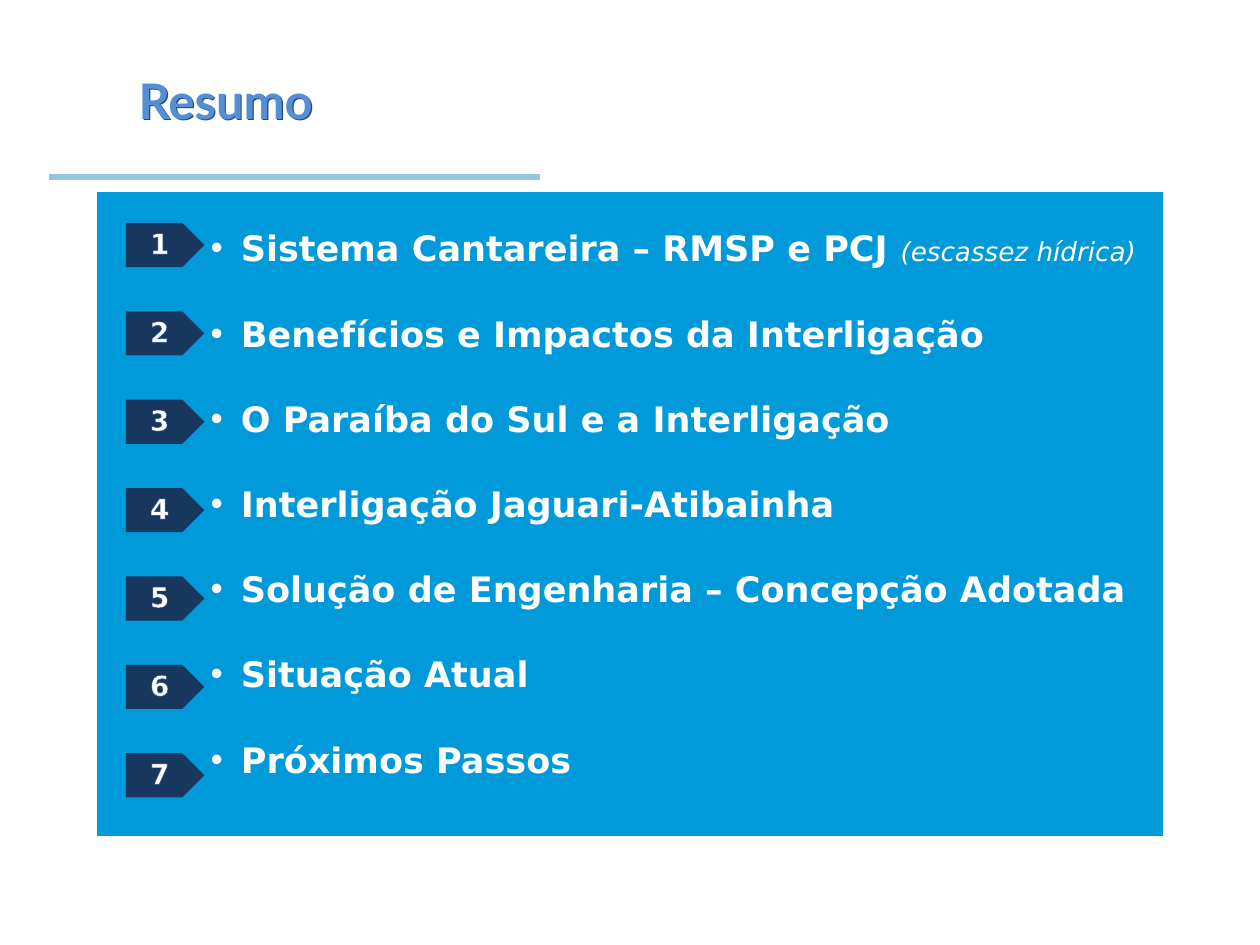
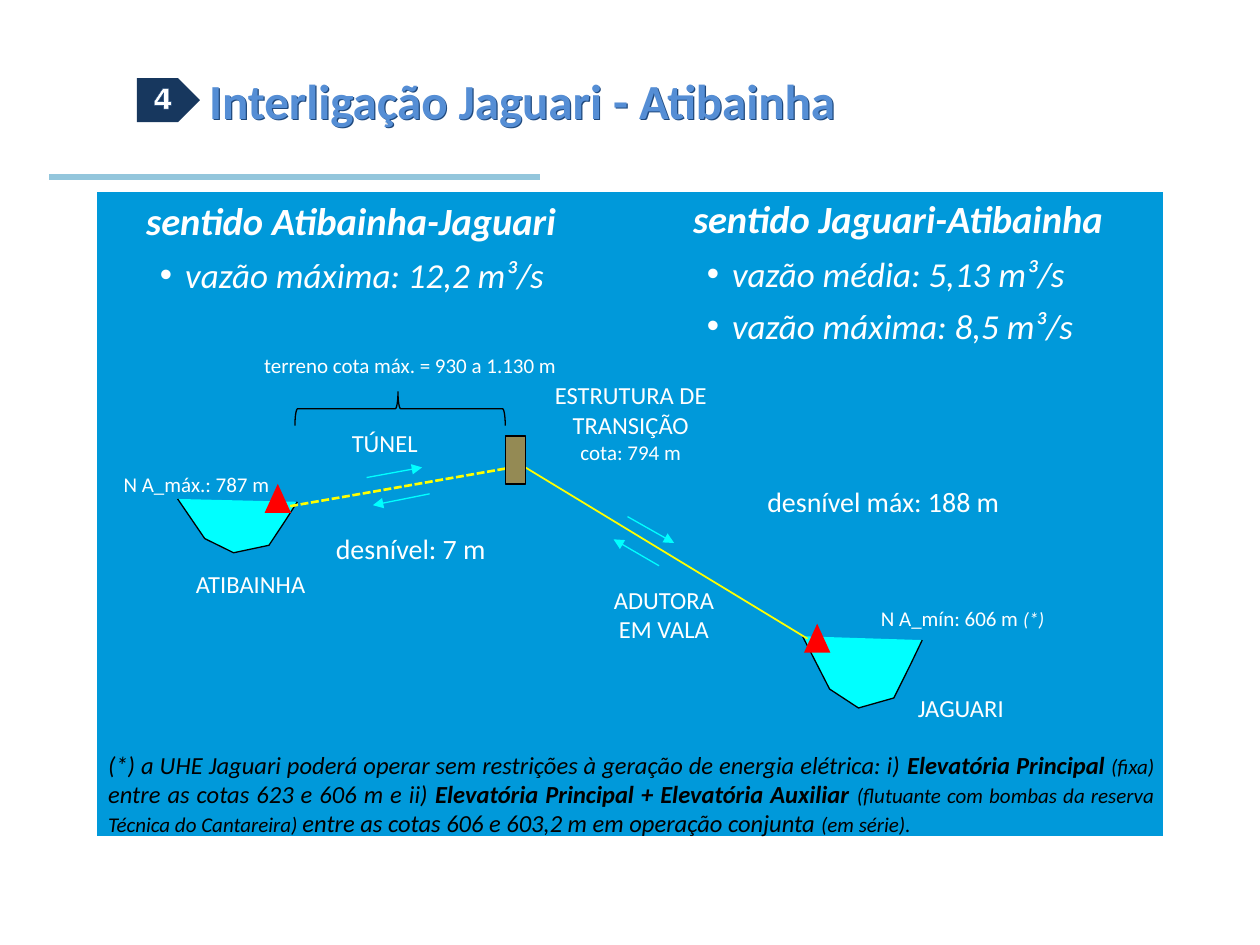
"""Build the summary and the Jaguari - Atibainha interconnection slides."""
from pptx import Presentation
from pptx import util as u
from pptx.dml.color import RGBColor
from pptx.enum import dml, shapes, text
from pptx.oxml import parse_xml
from pptx.oxml.ns import nsdecls, qn

Pt = u.Pt
rgb = RGBColor.from_string
A = nsdecls("a")
WHITE, BLACK, NAVY, PANEL, BAND = "FFFFFF", "000000", "17375E", "0099DA", "93C6DC"
TITLE, EDGE, CYAN, YELLOW, RED, TAN = "558ED5", "1F497D", "00FFFF", "FFFF00", "FF0000", "948A54"
LEFT, CENTER, JUSTIFY = text.PP_ALIGN.LEFT, text.PP_ALIGN.CENTER, text.PP_ALIGN.JUSTIFY
SHAPE = shapes.MSO_SHAPE
FRAME = {"word_wrap": True, "auto_size": text.MSO_AUTO_SIZE.NONE,
         "vertical_anchor": text.MSO_ANCHOR.TOP}


def paint(sp, fill=None, line=None, width=0.75):
    """Set fill and outline of a shape, without shadow."""
    sp.shadow.inherit = False
    if fill:
        sp.fill.solid()
        sp.fill.fore_color.rgb = rgb(fill)
    else:
        sp.fill.background()
    if line:
        sp.line.color.rgb = rgb(line)
        sp.line.width = Pt(width)
    else:
        sp.line.fill.background()


def write(sp, paras, fmt, color=WHITE, align=CENTER, **para):
    """Fill a shape with paragraphs, each a list of (text, format) runs."""
    tf = sp.text_frame
    for k, v in FRAME.items():
        setattr(tf, k, v)
    for i, runs in enumerate(paras):
        p = tf.add_paragraph() if i else tf.paragraphs[0]
        for k, v in {"alignment": align, "space_before": Pt(0), **para}.items():
            setattr(p, k, v if i or k != "space_before" else Pt(0))
        for words, extra in runs:
            r = p.add_run()
            r.text = words
            for k, v in {**fmt, **extra}.items():
                setattr(r.font, k, v)
            r.font.color.rgb = rgb(color)


prs = Presentation()
prs.slide_width, prs.slide_height = Pt(720), Pt(540)
s1 = prs.slides.add_slide(prs.slide_layouts[1])
s2 = prs.slides.add_slide(prs.slide_layouts[3])

master = prs.slide_master.shapes.element
for i, (box, fill) in enumerate([((54.7, 108.7, 610.6, 370), PANEL),
                                 ((27.4, 98.6, 282.2, 5), BAND)]):
    sp = s1.shapes.add_shape(SHAPE.RECTANGLE, *map(Pt, box))
    paint(sp, fill, WHITE, 1.5)
    master.insert(2 + i, sp.element)

for s, title, font, x, w in [(s1, "Resumo", "Lato", 72, 613),
                             (s2, "Interligação Jaguari - Atibainha", "Calibri", 112.3, 548)]:
    sp = s.shapes.title
    sp.left, sp.top, sp.width, sp.height = map(Pt, (x, 36.7, w, 41))
    write(sp, [[(title, {})]], {"name": font, "size": Pt(28), "bold": True}, TITLE, LEFT)
    sp.element.spPr.append(parse_xml(
        f'<a:effectLst {A}><a:outerShdw dist="12700" dir="2700000">'
        f'<a:srgbClr val="{EDGE}"/></a:outerShdw></a:effectLst>'))

topics = ["Sistema Cantareira – RMSP e PCJ ", "Benefícios e Impactos da Interligação",
          "O Paraíba do Sul e a Interligação", "Interligação Jaguari-Atibainha",
          "Solução de Engenharia – Concepção Adotada", "Situação Atual", "Próximos Passos"]
paras = [[(t, {})] for t in topics]
paras[0].append(("(escassez hídrica)", {"size": Pt(15), "bold": False, "italic": True}))
topic_list = s1.placeholders[1]
topic_list.left, topic_list.top, topic_list.width, topic_list.height = map(Pt, (103, 126, 560, 350))
write(topic_list, paras, {"name": "DejaVu Sans", "size": Pt(20), "bold": True},
      align=LEFT, space_before=Pt(24.7))

plain = {"size": Pt(20), "bold": False}
flows = [(s2.placeholders[1], (76.3, 109, 260, 66),
          ["sentido Atibainha-Jaguari", "vazão máxima: 12,2 m³/s"]),
         (s2.placeholders[2], (388.8, 108, 266, 96),
          ["sentido Jaguari-Atibainha", "vazão média: 5,13 m³/s", "vazão máxima: 8,5 m³/s"])]
for sp, box, lines in flows:
    sp.left, sp.top, sp.width, sp.height = map(Pt, box)
    write(sp, [[(t, plain if i else {})] for i, t in enumerate(lines)],
          {"name": "Calibri", "size": Pt(22), "bold": True, "italic": True},
          align=LEFT, space_after=Pt(6))

for sp, margin, hang in [(topic_list, 27.4, 17.3), (flows[0][0], 22.3, 14.4),
                         (flows[1][0], 22.3, 14.4)]:
    for i, p in enumerate(sp.text_frame.paragraphs):
        pPr = p._p.get_or_add_pPr()
        heading = i == 0 and sp is not topic_list
        pPr.set("marL", str(0 if heading else Pt(margin)))
        pPr.set("indent", str(0 if heading else -Pt(hang)))
        pPr.append(parse_xml(f"<a:buNone {A}/>" if heading else f'<a:buChar {A} char="•"/>'))

badges = [(s1, n + 1, 72, 127.4 + 50.5 * n, 44.8) for n in range(len(topics))]
for s, n, x, y, w in badges + [(s2, 4, 78.3, 44.6, 36)]:
    sp = s.shapes.add_shape(SHAPE.PENTAGON, *map(Pt, (x, y, w, 25.2)))
    paint(sp, NAVY)
    write(sp, [[(str(n), {})]], {"name": "DejaVu Sans", "size": Pt(16), "bold": True},
          line_spacing=0.9)
    sp.text_frame.vertical_anchor = text.MSO_ANCHOR.MIDDLE
    sp.text_frame.paragraphs[0].runs[0].font._element.insert(0, parse_xml(
        f'<a:ln {A} w="9525"><a:solidFill><a:srgbClr val="{EDGE}"/></a:solidFill></a:ln>'))

basin = [(15.5, 30.2), (32, 41), (52.2, 35.3), (61.5, 16.6), (68.4, 2.2)]
for x, y, depth in [(458.6, 363.6, 1), (101.5, 285.1, 0.75)]:
    fb = s2.shapes.build_freeform(Pt(x), Pt(y))
    fb.add_line_segments([(Pt(x + dx), Pt(y + dy * depth)) for dx, dy in basin], close=False)
    paint(fb.convert_to_shape(), CYAN, BLACK)

for ends, color, width, dash, arrow in [
        ((461.5, 365, 300.2, 267.1), YELLOW, 1, None, False),
        ((288.7, 267.8, 164.9, 289.4), YELLOW, 1.5, dml.MSO_LINE.SQUARE_DOT, False),
        ((358.6, 295.2, 385.2, 310.3), CYAN, 0.75, None, True),
        ((376.6, 323.3, 350.6, 308.2), CYAN, 0.75, None, True),
        ((209.5, 272.9, 241.2, 267.1), CYAN, 0.75, None, True),
        ((245.5, 282.2, 213.1, 288.7), CYAN, 0.75, None, True)]:
    c = s2.shapes.add_connector(shapes.MSO_CONNECTOR.STRAIGHT, *map(Pt, ends))
    c.line.color.rgb = rgb(color)
    c.line.width = Pt(width)
    if dash:
        c.line.dash_style = dash
    spPr = c._element.spPr
    if arrow:
        spPr.find(qn("a:ln")).append(parse_xml(f'<a:tailEnd {A} type="triangle"/>'))
    spPr.append(parse_xml(f"<a:effectLst {A}/>"))

for kind, box, fill, line in [
        (SHAPE.ISOSCELES_TRIANGLE, (459.4, 356.4, 15.1, 16.6), RED, None),
        (SHAPE.ISOSCELES_TRIANGLE, (151.2, 276.5, 15.1, 16.6), RED, None),
        (SHAPE.RECTANGLE, (288.7, 249.1, 11.5, 27.4), TAN, BLACK),
        (SHAPE.LEFT_BRACE, (218.9, 173.5, 19.4, 120.2), None, BLACK)]:
    sp = s2.shapes.add_shape(kind, *map(Pt, box))
    paint(sp, fill, line)
    if kind == SHAPE.LEFT_BRACE:
        sp.rotation = 90
        sp.adjustments[0], sp.adjustments[1] = 0.08, 0.51

small = {"size": Pt(12)}
for box, size, paras in [
        ((514.8, 392.4, 68.4, 24.5), 14, [[("JAGUARI", {})]]),
        ((97.9, 321.8, 90.7, 24.5), 14, [[("ATIBAINHA", {})]]),
        ((149, 241.2, 141.8, 24.5), 14, [[("TÚNEL", {})]]),
        ((341.3, 330.5, 76.3, 41), 14, [[("ADUTORA EM VALA", {})]]),
        ((301, 213.8, 118.8, 55.4), 14,
         [[("ESTRUTURA DE TRANSIÇÃO", {})], [("cota: 794 m", small)]]),
        ((492.5, 342.7, 115.2, 21.6), 12,
         [[("N A_mín: 606 m ", {}), ("(*)", {"size": Pt(11), "italic": True})]]),
        ((54.7, 265.7, 115.2, 21.6), 12, [[("N A_máx.: 787 m", {})]]),
        ((134.4, 198, 200, 21.6), 12, [[("terreno cota máx. = 930 a 1.130 m", {})]]),
        ((424.8, 273.6, 160, 26.6), 16, [[("desnível máx: 188 m", {})]]),
        ((174.7, 300.2, 120, 26.6), 16, [[("desnível: 7 m", {})]])]:
    sp = s2.shapes.add_textbox(*map(Pt, box))
    write(sp, paras, {"name": "Calibri", "size": Pt(size)})

bold = {"bold": True}
note = [("(*) a UHE Jaguari poderá operar sem restrições à geração de energia elétrica: i) ", {}),
        ("Elevatória Principal ", bold), ("(fixa) ", small),
        ("entre as cotas 623 e 606 m e ii) ", {}),
        ("Elevatória Principal + Elevatória Auxiliar ", bold),
        ("(flutuante com bombas da reserva Técnica do Cantareira) ", small),
        ("entre as cotas 606 e 603,2 m em operação conjunta ", {}), ("(em série).", small)]
sp = s2.shapes.add_textbox(*map(Pt, (54.7, 424.8, 612, 58.3)))
write(sp, [note], {"name": "Calibri", "size": Pt(14), "italic": True}, BLACK, JUSTIFY)

prs.save("out.pptx")
